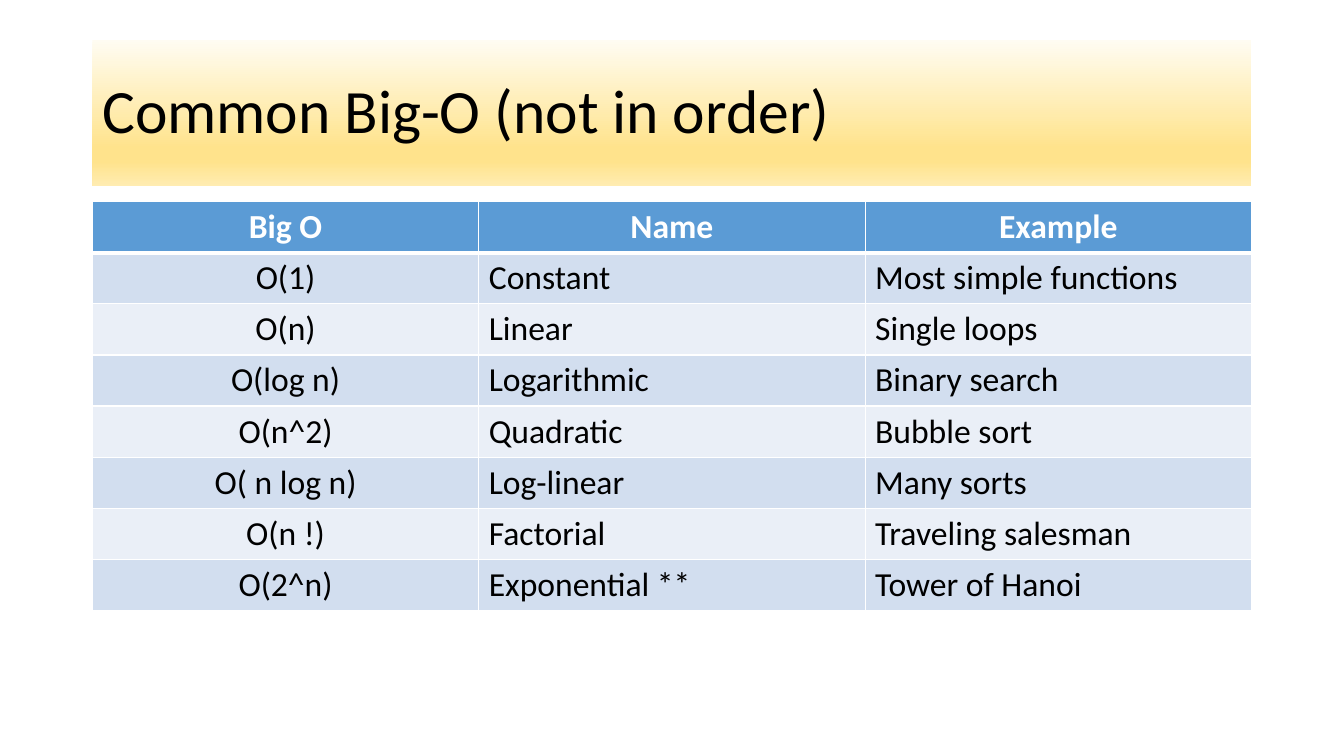
from dataclasses import dataclass

from lxml import etree
from pptx import Presentation
from pptx.dml.color import RGBColor
from pptx.enum import shapes, text
from pptx.oxml import ns
from pptx.util import Pt


@dataclass(frozen=True)
class Theme:
    """Colours, font and type sizes of the slide."""
    font: str = "Calibri"
    title_size: float = 44
    table_size: float = 24
    ink: str = "000000"
    paper: str = "FFFFFF"
    header: str = "5B9BD5"
    bands: tuple = ("D2DEEF", "EAEFF7")
    banner: tuple = ((0, "FFFCF2"), (74, "FFE38C"), (83, "FFE38C"), (100, "FFECB2"))
    rule: float = 1
    header_rule: float = 3


def write(frame, wording, *, font, size, color, bold=False,
          align=text.PP_ALIGN.LEFT, spacing=1.0):
    """Put one formatted paragraph into a text frame."""
    paragraph = frame.paragraphs[0]
    paragraph.alignment = align
    paragraph.line_spacing = spacing
    run = paragraph.add_run()
    run.text = wording
    run.font.name = font
    run.font.size = Pt(size)
    run.font.bold = bold
    run.font.color.rgb = RGBColor.from_string(color)


def add_color(parent, color):
    """Append an RGB colour element."""
    etree.SubElement(parent, ns.qn("a:srgbClr"), val=color)


class SlideBuilder:
    """Draws themed elements on the current slide."""

    def __init__(self, slide, theme):
        self.slide = slide
        self.theme = theme

    def banner(self, wording, left, top, width, height):
        """Add the gradient title banner."""
        banner = self.slide.shapes.add_shape(
            shapes.MSO_SHAPE.RECTANGLE, Pt(left), Pt(top), Pt(width), Pt(height))
        banner.shadow.inherit = False
        banner.line.fill.background()
        banner.fill.gradient()
        banner.fill.gradient_angle = 270
        stops = banner._element.spPr.find(".//" + ns.qn("a:gsLst"))
        for stop in list(stops):
            stops.remove(stop)
        for percent, color in self.theme.banner:
            stop = etree.SubElement(stops, ns.qn("a:gs"), pos=str(percent * 1000))
            add_color(stop, color)
        frame = banner.text_frame
        frame.word_wrap = True
        frame.vertical_anchor = text.MSO_ANCHOR.MIDDLE
        write(frame, wording, font=self.theme.font, size=self.theme.title_size,
              color=self.theme.ink, spacing=0.9)

    def borders(self, cell, **widths):
        """Rule the four sides of a cell."""
        properties = cell._tc.get_or_add_tcPr()
        for side in "LRTB":
            width = widths.get(side, self.theme.rule)
            line = etree.SubElement(properties, ns.qn(f"a:ln{side}"), w=str(Pt(width)))
            add_color(etree.SubElement(line, ns.qn("a:solidFill")), self.theme.paper)

    def table(self, rows, left, top, width, row_height):
        """Add a banded table whose first row is the header."""
        theme = self.theme
        grid = self.slide.shapes.add_table(
            len(rows), len(rows[0]), Pt(left), Pt(top), Pt(width),
            Pt(row_height * len(rows))).table
        for r, entries in enumerate(rows):
            header = r == 0
            heavy = {0: {"B": theme.header_rule}, 1: {"T": theme.header_rule}}.get(r, {})
            for c, wording in enumerate(entries):
                cell = grid.cell(r, c)
                self.borders(cell, **heavy)
                cell.fill.solid()
                cell.fill.fore_color.rgb = RGBColor.from_string(
                    theme.header if header else theme.bands[(r - 1) % 2])
                centred = header or c == 0
                write(cell.text_frame, wording, font=theme.font, size=theme.table_size,
                      color=theme.paper if header else theme.ink, bold=header,
                      align=text.PP_ALIGN.CENTER if centred else text.PP_ALIGN.LEFT)


COMPLEXITIES = [
    ("Big O", "Name", "Example"),
    ("O(1)", "Constant", "Most simple functions"),
    ("O(n)", "Linear", "Single loops"),
    ("O(log n)", "Logarithmic", "Binary search"),
    ("O(n^2)", "Quadratic", "Bubble sort"),
    ("O( n log n)", "Log-linear", "Many sorts"),
    ("O(n !)", "Factorial", "Traveling salesman"),
    ("O(2^n)", "Exponential **", "Tower of Hanoi"),
]


def main():
    """Build and save the slide."""
    deck = Presentation()
    deck.slide_width, deck.slide_height = Pt(960), Pt(540)
    builder = SlideBuilder(deck.slides.add_slide(deck.slide_layouts[6]), Theme())
    left, width = 66, 828
    builder.banner("Common Big-O (not in order)", left, 28.75, width, 104.4)
    builder.table(COMPLEXITIES, left, 144, width, 36.4)
    deck.save("out.pptx")


if __name__ == "__main__":
    main()
